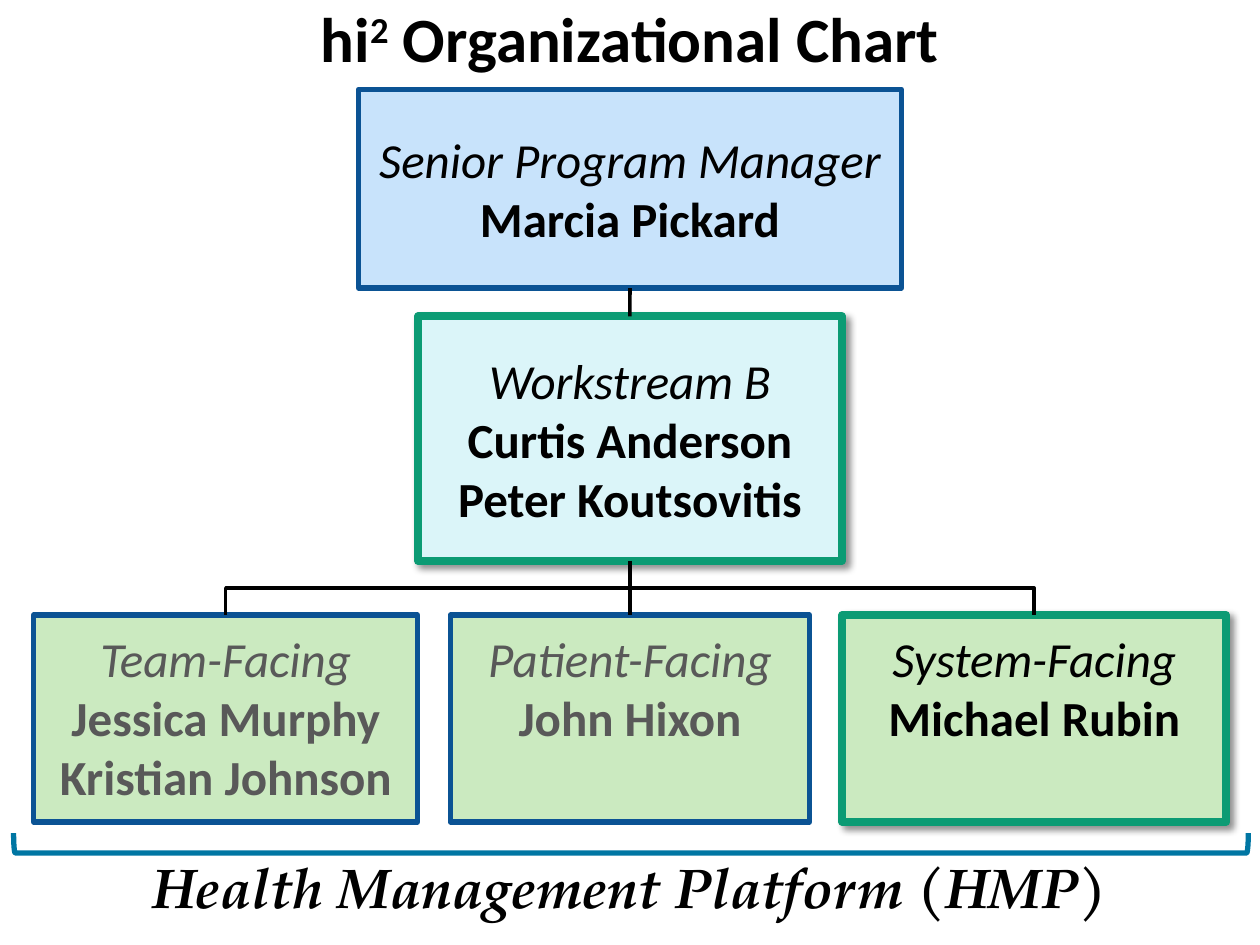
from dataclasses import dataclass

from lxml.etree import SubElement
from pptx import Presentation
from pptx.dml.color import RGBColor
from pptx.enum.shapes import MSO_CONNECTOR as Link, MSO_SHAPE as Kind
from pptx.enum.text import MSO_ANCHOR as Anchor, MSO_AUTO_SIZE as Fit, PP_ALIGN as Align
from pptx.oxml.ns import qn
from pptx.util import Cm, Pt

BLACK = RGBColor(0x00, 0x00, 0x00)
GREY = RGBColor(0x59, 0x59, 0x59)
NAVY = RGBColor(0x0B, 0x53, 0x94)
TEAL = RGBColor(0x0C, 0x9B, 0x74)
BLUE = RGBColor(0x00, 0x76, 0xA3)
SKY = RGBColor(0xC8, 0xE3, 0xFB)
AQUA = RGBColor(0xDB, 0xF5, 0xF9)
LIME = RGBColor(0xCB, 0xEA, 0xC0)

MID = 12.7      # centre line of the slide, cm
STEP = 8.15     # distance between team centres, cm


@dataclass
class Box:
    role: str
    names: list[str]
    mid: float
    top: float
    width: float
    height: float
    fill: RGBColor
    ink: RGBColor = BLACK
    active: bool = False    # green frame and shadow
    inset: float | None = None   # top inset; text is centred when None

    @property
    def base(self) -> float:
        return self.top + self.height


def write(para, text: str, *, size: float = 28, font: str = "Calibri",
          ink: RGBColor = BLACK, bold: bool = False, italic: bool = False,
          raised: bool = False) -> None:
    """Add one formatted run to a centred paragraph."""
    para.alignment = Align.CENTER
    run = para.add_run()
    run.text = text
    face = run.font
    face.name, face.size = font, Pt(size)
    face.bold, face.italic = bold, italic
    face.color.rgb = ink
    if raised:
        run._r.get_or_add_rPr().set("baseline", "30000")


def set_frame(frame, anchor, top: float = 0, base: float = 0) -> None:
    frame.vertical_anchor = anchor
    frame.margin_left = frame.margin_right = 0
    frame.margin_top, frame.margin_bottom = Cm(top), Cm(base)


def add_shadow(shape) -> None:
    effects = shape._element.spPr.find(qn("a:effectLst"))
    outer = SubElement(effects, qn("a:outerShdw"), blurRad=str(Pt(4)),
                       dist=str(Pt(3)), dir="2700000", algn="tl", rotWithShape="0")
    tint = SubElement(outer, qn("a:srgbClr"), val="000000")
    SubElement(tint, qn("a:alpha"), val="43000")


def draw_box(slide, box: Box):
    shape = slide.shapes.add_shape(
        Kind.RECTANGLE, Cm(box.mid - box.width / 2), Cm(box.top),
        Cm(box.width), Cm(box.height))
    shape.shadow.inherit = False
    shape.fill.solid()
    shape.fill.fore_color.rgb = box.fill
    shape.line.color.rgb = TEAL if box.active else NAVY
    shape.line.width = Pt(4.5 if box.active else 3)
    if box.active:
        add_shadow(shape)
    frame = shape.text_frame
    frame.word_wrap = True
    if box.inset is None:
        set_frame(frame, Anchor.MIDDLE)
    else:
        set_frame(frame, Anchor.TOP, box.inset)
    write(frame.paragraphs[0], box.role, ink=box.ink, italic=True)
    for name in box.names:
        write(frame.add_paragraph(), name, ink=box.ink, bold=True)
    return shape


def style_link(link) -> None:
    link.line.color.rgb = BLACK
    link.line.width = Pt(2)
    SubElement(link._element.spPr, qn("a:effectLst"))


def join(slide, upper, lower) -> None:
    link = slide.shapes.add_connector(Link.STRAIGHT, 0, 0, 0, 0)
    link.begin_connect(upper, 2)
    link.end_connect(lower, 0)
    style_link(link)


def branch(slide, upper: Box, lower: Box) -> None:
    """Draw an elbow down from one box to another at its side."""
    drop = lower.top - upper.base
    span = abs(lower.mid - upper.mid)
    x = (upper.mid + lower.mid - drop) / 2
    y = (upper.base + lower.top - span) / 2
    ends = [y, y + span]
    if lower.mid > upper.mid:
        ends.reverse()
    link = slide.shapes.add_connector(
        Link.ELBOW, Cm(x), Cm(ends[0]), Cm(x + drop), Cm(ends[1]))
    link._element.spPr.find(qn("a:xfrm")).set("rot", "5400000")
    style_link(link)


def draw_title(slide) -> None:
    title = slide.shapes.title
    title.left, title.top = Cm(0.89), Cm(-0.08)
    title.width, title.height = Cm(23.62), Cm(1.6)
    frame = title.text_frame
    frame.auto_size = Fit.NONE
    set_frame(frame, Anchor.BOTTOM, 0.13)
    para = frame.paragraphs[0]
    write(para, "hi", size=36, bold=True)
    write(para, "2", size=36, bold=True, raised=True)
    write(para, " Organizational Chart", size=36, bold=True)


def draw_platform(slide) -> None:
    brace = slide.shapes.add_shape(
        Kind.LEFT_BRACKET, Cm(12.52), Cm(4.55), Cm(0.4), Cm(24.89))
    brace.rotation = 270
    brace.shadow.inherit = False
    brace.fill.background()
    brace.line.color.rgb = BLUE
    brace.line.width = Pt(3)
    label = slide.shapes.add_textbox(Cm(2.3), Cm(17.07), Cm(20.8), Cm(1.63))
    label.text_frame.word_wrap = False
    write(label.text_frame.paragraphs[0], "Health Management Platform (HMP)",
          size=32, font="TeX Gyre Pagella", bold=True, italic=True)


def main() -> None:
    deck = Presentation()
    deck.slide_width, deck.slide_height = Cm(25.4), Cm(19.05)
    slide = deck.slides.add_slide(deck.slide_layouts[5])

    boss = Box("Senior Program Manager", ["Marcia Pickard"],
               MID, 1.8, 10.94, 4.01, SKY)
    stream = Box("Workstream B", ["Curtis Anderson", "Peter Koutsovitis"],
                 MID, 6.38, 8.54, 4.93, AQUA, active=True)
    row = dict(top=12.4, height=4.17, fill=LIME, inset=0.27)
    teams = [
        Box("Team-Facing", ["Jessica Murphy", "Kristian Johnson"],
            MID - STEP, width=7.74, ink=GREY, **row),
        Box("Patient-Facing", ["John Hixon"], MID, width=7.24, ink=GREY, **row),
        Box("System-Facing", ["Michael Rubin"],
            MID + STEP, width=7.74, active=True, **row),
    ]

    draw_title(slide)
    draw_platform(slide)
    top, hub, _, centre, _ = [draw_box(slide, box) for box in (boss, stream, *teams)]
    join(slide, top, hub)
    join(slide, hub, centre)
    for team in (teams[0], teams[2]):
        branch(slide, stream, team)

    deck.save("out.pptx")


if __name__ == "__main__":
    main()
